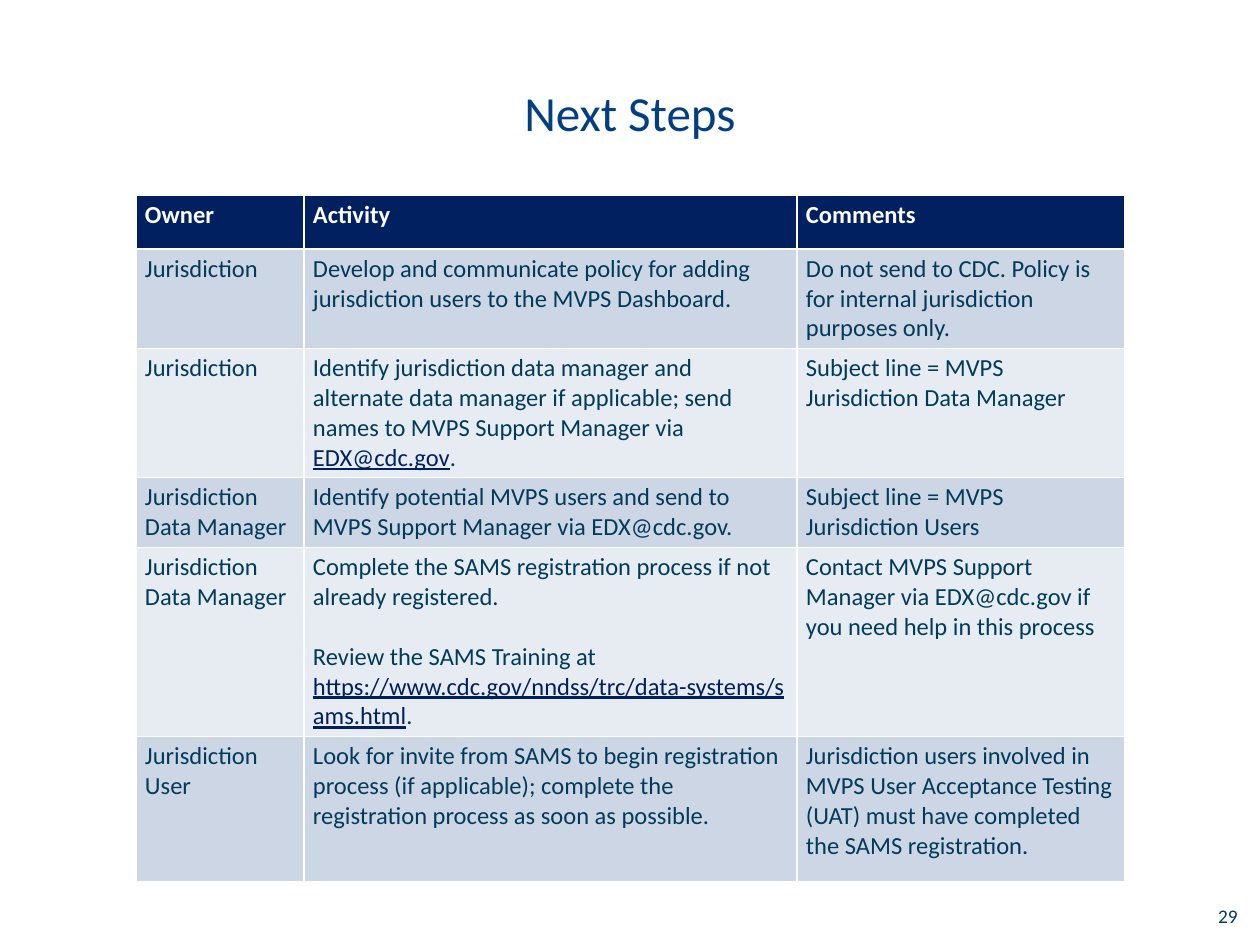
import pptx
import pptx.util
from pptx.dml.color import RGBColor
from pptx.enum.text import MSO_ANCHOR, PP_ALIGN

SCALE = 914400 / 126
FONT = "Calibri"
WHITE = RGBColor(0xFF, 0xFF, 0xFF)
NAVY = RGBColor(0x00, 0x20, 0x60)
BLUE = RGBColor(0x00, 0x3F, 0x82)
INK = RGBColor(0x00, 0x3B, 0x5A)
BANDS = RGBColor(0xCC, 0xD6, 0xE5), RGBColor(0xE7, 0xEC, 0xF2)

COLS = [168, 493, 328]
ROWS = [54, 99, 128, 70, 189, 145]
HEADS = ["Owner", "Activity", "Comments"]
# A cell is a list of paragraphs; a paragraph alternates plain and link text.
STEPS = [
    [[["Jurisdiction"]],
     [["Develop and communicate policy for adding jurisdiction users "
       "to the MVPS Dashboard."]],
     [["Do not send to CDC. Policy is for internal jurisdiction "
       "purposes only."]]],
    [[["Jurisdiction"]],
     [["Identify jurisdiction data manager and alternate data manager if "
       "applicable; send names to MVPS Support Manager via ",
       "EDX@cdc.gov", "."]],
     [["Subject line = MVPS Jurisdiction Data Manager"]]],
    [[["Jurisdiction Data Manager"]],
     [["Identify potential MVPS users and send to MVPS Support Manager "
       "via EDX@cdc.gov."]],
     [["Subject line = MVPS Jurisdiction Users"]]],
    [[["Jurisdiction Data Manager"]],
     [["Complete the SAMS registration process if not already registered."],
      ["Review the SAMS Training at ",
       "https://www.cdc.gov/nndss/trc/data-systems/sams.html", "."]],
     [["Contact MVPS Support Manager via EDX@cdc.gov if you need help "
       "in this process"]]],
    [[["Jurisdiction User"]],
     [["Look for invite from SAMS to begin registration process (if "
       "applicable); complete the registration process as soon as "
       "possible."]],
     [["Jurisdiction users involved in MVPS User Acceptance Testing (UAT) "
       "must have completed the SAMS registration."]]],
]


def px(count):
    return pptx.util.Emu(round(count * SCALE))


def add_run(para, text, size, color, bold=False, line=False):
    run = para.add_run()
    run.text = text
    font = run.font
    font.name = FONT
    font.size = pptx.util.Pt(size)
    font.color.rgb = color
    font.bold = bold
    font.underline = line


def add_title(slide, text):
    title = slide.shapes.title
    title.left, title.top, title.width, title.height = map(
        px, (63, -10, 1134, 158))
    frame = title.text_frame
    frame.vertical_anchor = MSO_ANCHOR.BOTTOM
    para = frame.paragraphs[0]
    para.alignment = PP_ALIGN.CENTER
    para.line_spacing = pptx.util.Pt(30)
    add_run(para, text, 28, BLUE)


def add_number(slide, text):
    box = slide.shapes.add_textbox(*map(px, (956, 891, 294, 50)))
    frame = box.text_frame
    frame.word_wrap = True
    frame.vertical_anchor = MSO_ANCHOR.MIDDLE
    para = frame.paragraphs[0]
    para.alignment = PP_ALIGN.RIGHT
    add_run(para, text, 11, INK)


def fill_cell(cell, paras, back, color, bold=False):
    cell.fill.solid()
    cell.fill.fore_color.rgb = back
    cell.margin_left = cell.margin_right = px(9)
    cell.margin_top = cell.margin_bottom = px(5)
    frame = cell.text_frame
    for i, parts in enumerate(paras):
        para = frame.add_paragraph() if i else frame.paragraphs[0]
        if i:
            para.space_before = pptx.util.Pt(17)
        for j, text in enumerate(parts):
            link = j % 2 == 1
            add_run(para, text, 14, NAVY if link else color, bold, link)


def add_steps(slide):
    frame = slide.shapes.add_table(
        len(ROWS), len(COLS), px(136), px(195), px(sum(COLS)), px(sum(ROWS)))
    table = frame.table
    table.horz_banding = False
    for col, width in zip(table.columns, COLS):
        col.width = px(width)
    for row, height in zip(table.rows, ROWS):
        row.height = px(height)
    for c, head in enumerate(HEADS):
        fill_cell(table.cell(0, c), [[head]], NAVY, WHITE, True)
    for r, step in enumerate(STEPS):
        for c, paras in enumerate(step):
            fill_cell(table.cell(r + 1, c), paras, BANDS[r % 2], INK)


def main():
    deck = pptx.Presentation()
    deck.slide_width, deck.slide_height = px(1260), px(945)
    slide = deck.slides.add_slide(deck.slide_layouts[5])
    add_title(slide, "Next Steps")
    add_steps(slide)
    add_number(slide, "29")
    deck.save("out.pptx")


if __name__ == "__main__":
    main()
